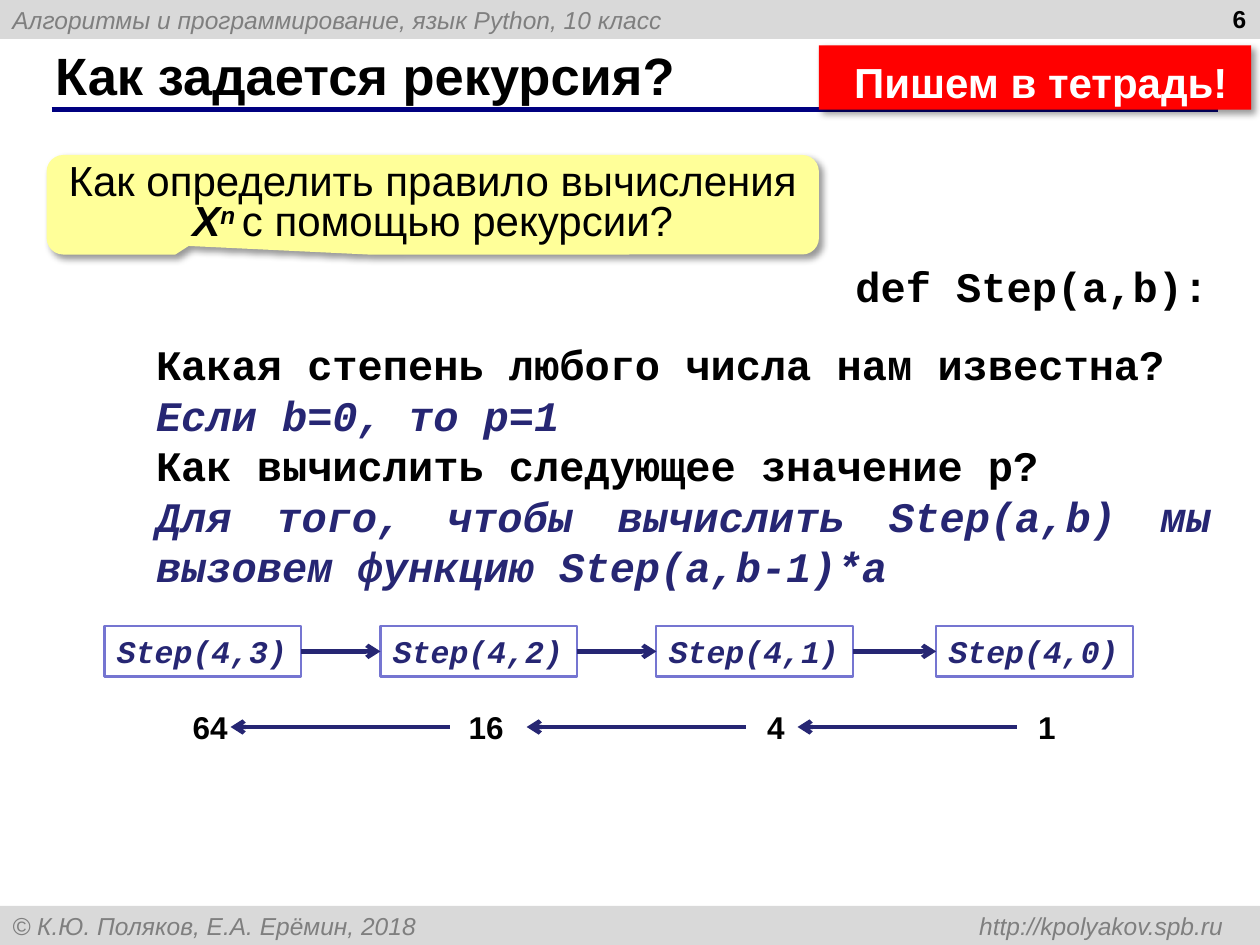
from lxml import etree
from pptx import Presentation
from pptx.dml.color import RGBColor
from pptx.enum.shapes import MSO_CONNECTOR, MSO_SHAPE
from pptx.enum.text import MSO_ANCHOR, PP_ALIGN
from pptx.oxml import parse_xml
from pptx.oxml.ns import qn
from pptx.util import Inches, Pt

STRAIGHT = MSO_CONNECTOR.STRAIGHT
RECT, CALLOUT = MSO_SHAPE.RECTANGLE, MSO_SHAPE.ROUNDED_RECTANGULAR_CALLOUT
TOP, MIDDLE = MSO_ANCHOR.TOP, MSO_ANCHOR.MIDDLE
LEFT, CENTER, RIGHT, JUSTIFY = PP_ALIGN.LEFT, PP_ALIGN.CENTER, PP_ALIGN.RIGHT, PP_ALIGN.JUSTIFY
SANS, MONO = "Arial", "Courier New"
COLORS = {
    "black": "000000", "white": "FFFFFF", "band": "D9D9D9", "grey": "7F7F7F",
    "rule": "000080", "ink": "262673", "border": "7575D1",
    "yellow": "FFFF99", "red": "FF0000",
}
SHADOW = (
    '<a:effectLst xmlns:a="http://schemas.openxmlformats.org/drawingml/2006/main">'
    '<a:outerShdw blurRad="50800" dist="38100" dir="2700000" algn="tl" rotWithShape="0">'
    '<a:srgbClr val="000000"><a:alpha val="40000"/></a:srgbClr>'
    '</a:outerShdw></a:effectLst>'
)


def color(name):
    """Return the named colour."""
    return RGBColor.from_string(COLORS[name])


def style(para, size, ink="black", face=SANS, bold=False, italic=False, align=LEFT):
    """Set the font and alignment of a paragraph."""
    font = para.font
    font.name, font.size, font.bold, font.italic = face, Pt(size), bold, italic
    font.color.rgb = color(ink)
    para.alignment = align


def add_box(page, box, fill=None, border=None, kind=RECT, shadow=False):
    """Add a preset shape with an optional fill, border and shadow."""
    shape = page.shapes.add_shape(kind, *map(Inches, box))
    if fill:
        shape.fill.solid()
        shape.fill.fore_color.rgb = color(fill)
    else:
        shape.fill.background()
    if border:
        shape.line.color.rgb = color(border)
        shape.line.width = Pt(1.25)
    else:
        shape.line.fill.background()
    shape.shadow.inherit = False
    if shadow:
        properties = shape._element.spPr
        properties.replace(properties.find(qn("a:effectLst")), parse_xml(SHADOW))
    return shape


def write(shape, text, size, anchor=TOP, wrap=True, **look):
    """Write one styled paragraph into a shape."""
    frame = shape.text_frame
    frame.word_wrap, frame.vertical_anchor = wrap, anchor
    frame.text = text
    style(frame.paragraphs[0], size, **look)
    return frame


def add_text(page, box, text, size, **look):
    """Add a text box holding one paragraph."""
    return write(page.shapes.add_textbox(*map(Inches, box)), text, size, **look)


def add_line(page, start, end, ink, width, arrow=False):
    """Add a straight line, with an arrowhead at its end if wanted."""
    line = page.shapes.add_connector(STRAIGHT, *map(Inches, (*start, *end)))
    line.line.color.rgb = color(ink)
    line.line.width = Pt(width)
    if arrow:
        etree.SubElement(line.line._get_or_add_ln(), qn("a:tailEnd"), type="arrow")
    etree.SubElement(line._element.spPr, qn("a:effectLst"))
    return line


def add_band(page, box, text, tab=None):
    """Add a grey band with its caption and an optional right tab stop."""
    frame = write(add_box(page, box, "band"), text, 14, anchor=MIDDLE, ink="grey", italic=True)
    if tab:
        stops = etree.Element(qn("a:tabLst"))
        etree.SubElement(stops, qn("a:tab"), pos=str(Inches(tab)), algn="r")
        frame.paragraphs[0]._p.get_or_add_pPr().insert(0, stops)


def add_heading(page, box):
    """Add the title, the rule below it and the page number."""
    left, top, width, height = box
    rule = top + height + 0.02
    add_line(page, (left + 0.07, rule), (left + width + 0.17, rule), "rule", 3)
    add_text(page, box, "Как задается рекурсия?", 30, anchor=MIDDLE, bold=True)
    add_text(page, (left + 7.32, top - 0.35, 2.33, 0.52), "6", 14, bold=True, align=RIGHT)


def add_question(page, box):
    """Add the yellow callout with the question."""
    callout = add_box(page, box, "yellow", kind=CALLOUT, shadow=True)
    for index, value in enumerate((-0.316, 0.414, 0.167)):
        callout.adjustments[index] = value
    frame = write(callout, "", 24, anchor=MIDDLE, align=CENTER)
    frame.margin_left = frame.margin_top = frame.margin_right = frame.margin_bottom = 0
    para = frame.paragraphs[0]
    para.line_spacing = 0.8
    for text, strong in (("Как определить правило вычисления ", False), ("Х", True),
                         ("n ", True), ("с помощью рекурсии?", False)):
        span = para.add_run()
        span.text = text
        span.font.bold = span.font.italic = strong
    para.runs[2].font._element.set("baseline", "30000")


def add_banner(page, box):
    """Add the red reminder."""
    frame = write(add_box(page, box, "red", shadow=True), "Пишем в тетрадь!", 24,
                  ink="white", bold=True)
    frame.margin_left, frame.margin_top = Inches(0.28), Inches(0.09)


def add_dialogue(page, box):
    """Add the questions, each followed by its answer."""
    lines = (
        "Какая степень любого числа нам известна?",
        "Если b=0, то p=1",
        "Как вычислить следующее значение р?",
        "Для того, чтобы вычислить Step(a,b) мы вызовем функцию Step(a,b-1)*а",
    )
    frame = add_text(page, box, "\n".join(lines), 24, anchor=MIDDLE)
    for index, para in enumerate(frame.paragraphs):
        answer = index % 2 == 1
        style(para, 24, "ink" if answer else "black", MONO, True, answer, JUSTIFY)


def add_recursion(page, box):
    """Add the chain of calls and the values returned below it."""
    left, top, width, height = box
    calls = []
    for offset, power in zip((0, 2.19, 4.38, 6.6), (3, 2, 1, 0)):
        call = add_box(page, (left + offset, top, 1.56, height), border="border")
        write(call, f"Step(4,{power})", 18, wrap=False, ink="ink", face=MONO,
              bold=True, italic=True)
        calls.append(call)
    for caller, callee in zip(calls, calls[1:]):
        arrow = add_line(page, (left, top), (left + width, top), "ink", 2.5, arrow=True)
        arrow.begin_connect(caller, 3)
        arrow.end_connect(callee, 1)
    for offset, value in zip((0.6, 2.79, 5.16, 7.31), ("64", "16", "4", "1")):
        span = 0.2 + 0.14 * len(value)
        add_text(page, (left + offset, top + 0.6, span, height), value, 18, wrap=False, bold=True)
    for offset in (2.74, 5.09, 7.24):
        start, level = left + offset, top + 0.8
        add_line(page, (start, level), (start - 1.74, level), "ink", 2.5, arrow=True)


def main():
    """Build the slide and save the deck."""
    deck = Presentation()
    deck.slide_width, deck.slide_height = Inches(10), Inches(7.5)
    page = deck.slides.add_slide(deck.slide_layouts[6])
    add_band(page, (0, 0, 10, 0.31), "Алгоритмы и программирование, язык Python, 10 класс")
    add_band(page, (0, 7.19, 10, 0.31),
             "© К.Ю. Поляков, Е.А. Ерёмин, 2018\thttp://kpolyakov.spb.ru", tab=9.61)
    add_heading(page, (0.34, 0.33, 9.16, 0.52))
    add_question(page, (0.37, 1.23, 6.13, 0.79))
    add_dialogue(page, (1.14, 2.63, 8.57, 2.12))
    add_banner(page, (6.5, 0.36, 3.43, 0.51))
    add_text(page, (6.69, 2.02, 3.02, 0.5), "def Step(a,b):", 24, wrap=False,
             face=MONO, bold=True, align=JUSTIFY)
    add_recursion(page, (0.83, 4.97, 8.16, 0.4))
    deck.save("out.pptx")


if __name__ == "__main__":
    main()
